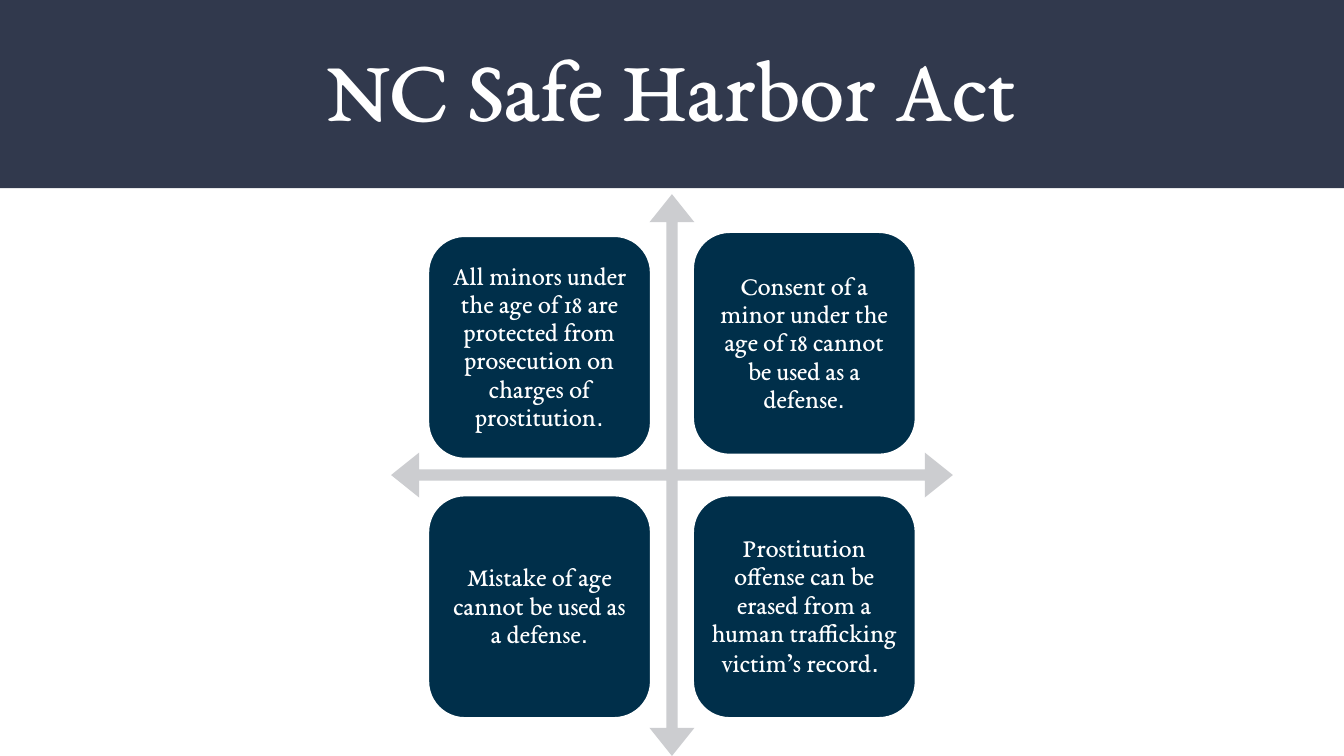
from pptx import Presentation
from pptx.dml.color import RGBColor
from pptx.enum.shapes import MSO_SHAPE
from pptx.enum.text import MSO_ANCHOR, MSO_AUTO_SIZE, PP_ALIGN
from pptx.util import Inches, Pt

TITLE = "NC Safe Harbor Act"
# (provision, ending, column, row, vertical nudge, size of the ending)
PROVISIONS = [
    ("All minors under the age of 18 are protected from prosecution on charges of prostitution", ".", 0, 0, 0.03, 14),
    ("Consent of a minor under the age of 18 cannot be used as a defense", ".", 1, 0, 0, 14),
    ("Mistake of age cannot be used as a defense", ".", 0, 1, 0, 14),
    ("Prostitution offense can be erased from a human trafficking victim’s record", ". ", 1, 1, 0, 15),
]

THEME = {
    "white": RGBColor.from_string("FFFFFF"),
    "band": RGBColor.from_string("31394D"),
    "arrows": RGBColor.from_string("CCCDD0"),
    "card": RGBColor.from_string("002F4A"),
    "font": "EB Garamond",
    "ending_font": "Arial",
    "title_size": 48,
    "card_size": 14,
}

SLIDE_W = 10
SLIDE_H = SLIDE_W * 9 / 16
ARROWS = 4.18
CARD = 1.67
GRID_LEFT, GRID_TOP = 3.18, 1.72
STEP_X, STEP_Y = 1.97, 1.96


def add_filled(slide, preset, left, top, width, height, color):
    shape = slide.shapes.add_shape(
        preset, Inches(left), Inches(top), Inches(width), Inches(height))
    shape.shadow.inherit = False
    shape.fill.solid()
    shape.fill.fore_color.rgb = color
    shape.line.fill.background()
    return shape


def set_frame(frame, inset, anchor):
    frame.margin_left = frame.margin_right = Inches(inset)
    frame.margin_top = frame.margin_bottom = Inches(inset)
    frame.vertical_anchor = anchor
    frame.word_wrap = True
    frame.auto_size = MSO_AUTO_SIZE.NONE


def style_run(run, font_name, size):
    run.font.name = font_name
    run.font.size = Pt(size)
    run.font.color.rgb = THEME["white"]


def add_provision(slide, provision, ending, column, row, nudge, ending_size):
    card = add_filled(slide, MSO_SHAPE.ROUNDED_RECTANGLE,
                      GRID_LEFT + column * STEP_X, GRID_TOP + row * STEP_Y + nudge,
                      CARD, CARD, THEME["card"])
    card.line.color.rgb = THEME["white"]
    card.line.width = Pt(2)
    set_frame(card.text_frame, 0.06, MSO_ANCHOR.MIDDLE)
    paragraph = card.text_frame.paragraphs[0]
    paragraph.text = provision
    paragraph.alignment = PP_ALIGN.CENTER
    paragraph.line_spacing = 0.9
    style_run(paragraph.runs[0], THEME["font"], THEME["card_size"])
    ending_run = paragraph.add_run()
    ending_run.text = ending
    style_run(ending_run, THEME["ending_font"], ending_size)


def main():
    prs = Presentation()
    prs.slide_width, prs.slide_height = Inches(SLIDE_W), Inches(SLIDE_H)
    slide = prs.slides.add_slide(prs.slide_layouts[5])

    # Header band, placed behind the title
    band = add_filled(slide, MSO_SHAPE.RECTANGLE, 0, 0, SLIDE_W, 1.4, THEME["band"])
    slide.shapes._spTree.insert(2, band._element)

    # Title
    title = slide.shapes.title
    title.left, title.top = Inches(0.34), Inches(0.14)
    title.width, title.height = Inches(9.32), Inches(1.09)
    title.text_frame.text = TITLE
    set_frame(title.text_frame, 0.1, MSO_ANCHOR.TOP)
    heading = title.text_frame.paragraphs[0]
    heading.alignment = PP_ALIGN.CENTER
    style_run(heading.runs[0], THEME["font"], THEME["title_size"])

    # Four-way arrows, centred and resting on the bottom edge
    arrows = add_filled(slide, MSO_SHAPE.QUAD_ARROW, (SLIDE_W - ARROWS) / 2,
                        SLIDE_H - ARROWS, ARROWS, ARROWS, THEME["arrows"])
    for index, ratio in enumerate((0.02, 0.04, 0.05)):
        arrows.adjustments[index] = ratio

    # Provision cards
    for provision in PROVISIONS:
        add_provision(slide, *provision)

    prs.save("out.pptx")


if __name__ == "__main__":
    main()
